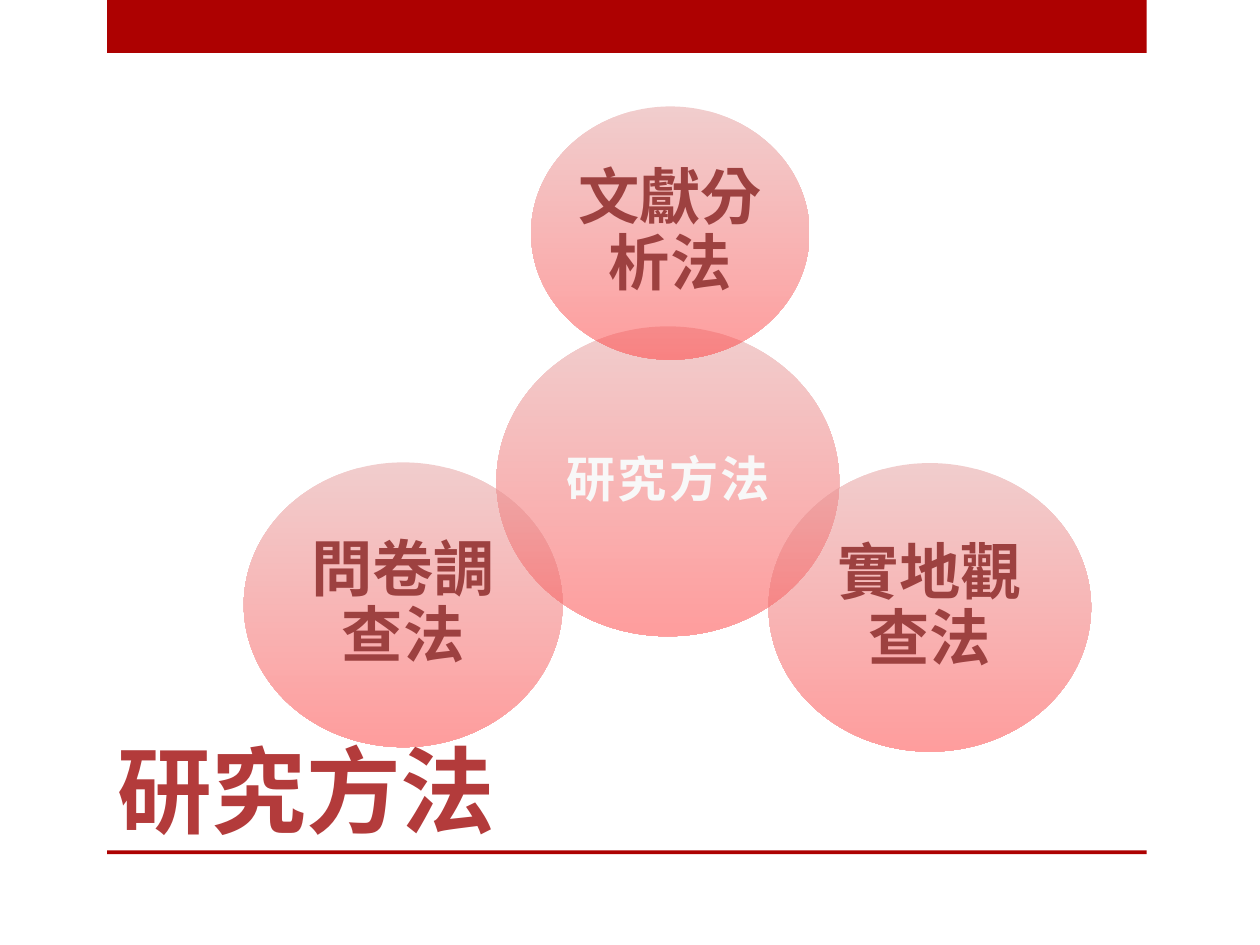
from lxml.etree import SubElement
from pptx import Presentation
from pptx.dml.color import RGBColor
from pptx.enum.lang import MSO_LANGUAGE_ID as Language
from pptx.enum.shapes import MSO_SHAPE as Shape
from pptx.enum.text import MSO_ANCHOR as Anchor, PP_ALIGN as Align
from pptx.oxml.ns import qn
from pptx.util import Inches, Pt

COLORS = {
    "accent": "AD0101",
    "title": "B33B3B",
    "circle_top": "E49D9D",
    "circle_bottom": "FF3D3D",
    "center_text": "F8F8F8",
    "method_text": "9D4140",
}

presentation = Presentation()
presentation.slide_width = Inches(10)
presentation.slide_height = Inches(7.5)
slide = presentation.slides.add_slide(presentation.slide_layouts[5])


def place(shape, left, top, width, height):
    shape.left, shape.top = Inches(left), Inches(top)
    shape.width, shape.height = Inches(width), Inches(height)


def add_text(frame, text, size, font_name, color, anchor, align):
    frame.word_wrap = True
    frame.vertical_anchor = anchor
    paragraph = frame.paragraphs[0]
    paragraph.alignment = align
    run = paragraph.add_run()
    run.text = text
    run.font.size = Pt(size)
    run.font.bold = True
    run.font.name = font_name
    run.font.language_id = Language.TRADITIONAL_CHINESE
    run.font.color.rgb = RGBColor.from_string(COLORS[color])
    return paragraph, run


# Top band and bottom rule
for top, height in ((0, 0.42), (6.75, 0.03)):
    bar = slide.shapes.add_shape(Shape.RECTANGLE, 0, 0, 0, 0)
    place(bar, 0.85, top, 8.25, height)
    bar.shadow.inherit = False
    bar.fill.solid()
    bar.fill.fore_color.rgb = RGBColor.from_string(COLORS["accent"])
    bar.line.fill.background()

# Title
title = slide.shapes.title
place(title, 0.83, 5.72, 7.42, 1.04)
add_text(title.text_frame, "研究方法", 54, "Roboto Condensed", "title",
         Anchor.BOTTOM, Align.LEFT)

# Central topic and its three methods: center x, center y, width, height
circles = (
    ("研究方法", 5.3, 3.82, 2.72, 2.46, 28, "center_text", 1.5),
    ("文獻分析法", 5.32, 1.85, 2.21, 2.01, 35, "method_text", 0),
    ("實地觀查法", 7.38, 4.82, 2.56, 2.29, 35, "method_text", 0),
    ("問卷調查法", 3.2, 4.8, 2.53, 2.26, 35, "method_text", 0),
)
for text, center_x, center_y, width, height, size, color, spacing in circles:
    circle = slide.shapes.add_shape(Shape.OVAL, 0, 0, 0, 0)
    place(circle, center_x - width / 2, center_y - height / 2, width, height)
    circle.shadow.inherit = False
    circle.line.fill.background()

    # Half-transparent gradient running from top to bottom
    circle.fill.gradient()
    circle.fill.gradient_angle = 270
    for stop, position, name in zip(circle.fill.gradient_stops, (0, 1),
                                    ("circle_top", "circle_bottom")):
        stop.position = position
        stop.color.rgb = RGBColor.from_string(COLORS[name])
    for color_element in circle.fill._xPr.iter(qn("a:srgbClr")):
        SubElement(color_element, qn("a:alpha"), val="50000")

    frame = circle.text_frame
    frame.margin_left = frame.margin_right = Inches(0.04)
    frame.margin_top = frame.margin_bottom = Inches(0.04)
    paragraph, run = add_text(frame, text, size, "Times New Roman", color,
                              Anchor.MIDDLE, Align.CENTER)
    paragraph.line_spacing = 0.9
    if spacing:
        run.font._element.set("spc", str(int(spacing * 100)))

presentation.save("out.pptx")
